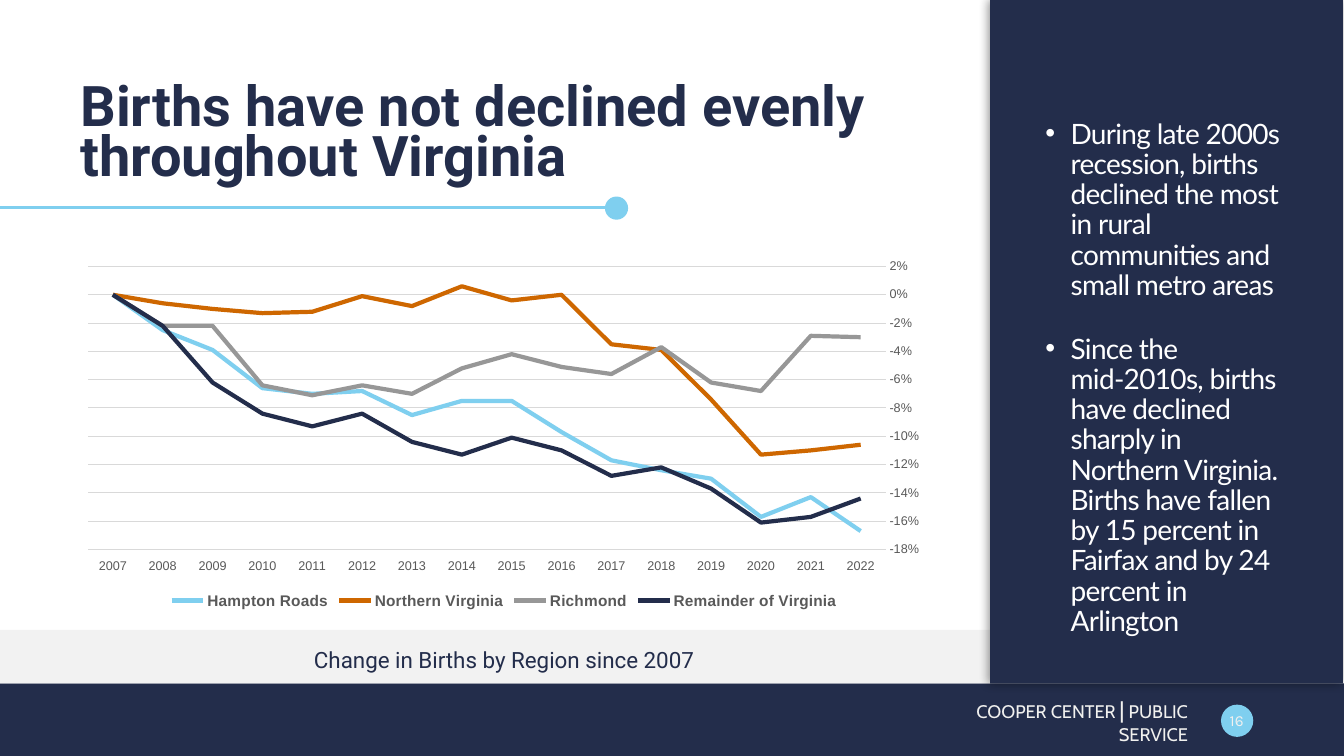
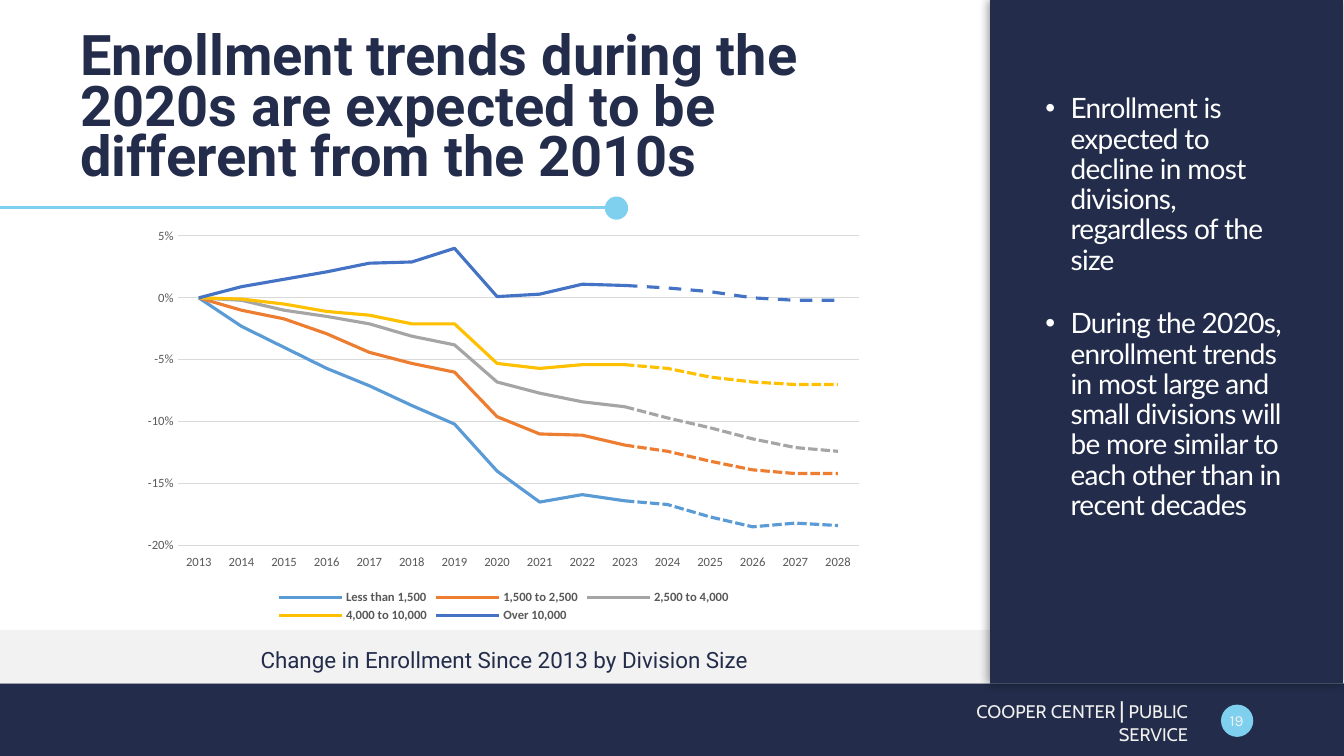
"""Builds two slides on births and enrollment, each with a line chart and a side panel."""
from dataclasses import dataclass
from typing import Any, NamedTuple

from lxml.etree import SubElement
from pptx import Presentation
from pptx.chart.data import CategoryChartData
from pptx.dml.color import RGBColor
from pptx.enum.chart import XL_CHART_TYPE, XL_LEGEND_POSITION, XL_TICK_LABEL_POSITION, XL_TICK_MARK
from pptx.enum.dml import MSO_LINE
from pptx.enum.shapes import MSO_CONNECTOR, MSO_SHAPE
from pptx.enum.text import MSO_ANCHOR, PP_ALIGN
from pptx.oxml.ns import qn
from pptx.util import Inches, Pt

NAVY, SKY, PALE, WHITE, OFF_WHITE = "232D4B", "7FCFEF", "F2F2F2", "FFFFFF", "F1F1EF"
GRID, LABEL = "D9D9D9", "595959"


class Box(NamedTuple):
    left: float
    top: float
    width: float
    height: float


class Style(NamedTuple):
    font: str
    size: float
    color: str
    bold: bool = False


class Band(NamedTuple):
    shape: MSO_SHAPE
    box: Box
    color: str
    shadow: bool = False


class Line(NamedTuple):
    name: str
    color: str
    values: list[float | None]
    dash: MSO_LINE | None = None


@dataclass
class LineChart:
    box: Box
    years: list[int]
    lines: list[Line]
    font: str
    legend_size: float
    width: float
    scale: dict[str, float]
    plot: Box
    legend: Box
    reverse: bool = False
    hidden: range = range(0)


@dataclass
class Page:
    number: int
    title: str
    points: list[str]
    points_box: Box
    caption: str
    chart: LineChart


TITLE = Style("Roboto", 40, NAVY, True)
CAPTION = Style("Roboto", 16, NAVY)
POINT = Style("Lato", 20, WHITE)
FOOTER = Style("Cabin", 13, OFF_WHITE)
NUMBER = Style("Karla", 11, OFF_WHITE)

BANDS = [
    Band(MSO_SHAPE.RECTANGLE, Box(0, 6.78, 13.33, 0.72), NAVY),
    Band(MSO_SHAPE.OVAL, Box(12.11, 6.99, 0.32, 0.32), SKY),
    Band(MSO_SHAPE.RECTANGLE, Box(0, 6.25, 9.82, 0.53), PALE),
    Band(MSO_SHAPE.RECTANGLE, Box(9.82, 0, 3.5, 6.78), NAVY, True),
    Band(MSO_SHAPE.OVAL, Box(6, 1.95, 0.23, 0.23), SKY),
]

REGIONS = [
    Line("Hampton Roads", SKY, [-0.167, -0.143, -0.157, -0.13, -0.124, -0.117, -0.097, -0.075,
                                -0.075, -0.085, -0.068, -0.07, -0.066, -0.039, -0.025, 0]),
    Line("Northern Virginia", "CE6700", [-0.106, -0.11, -0.113, -0.074, -0.039, -0.035, 0, -0.004,
                                         0.006, -0.008, -0.001, -0.012, -0.013, -0.01, -0.006, 0]),
    Line("Richmond", "979797", [-0.03, -0.029, -0.068, -0.062, -0.037, -0.056, -0.051, -0.042,
                                -0.052, -0.07, -0.064, -0.071, -0.064, -0.022, -0.022, 0]),
    Line("Remainder of Virginia", NAVY, [-0.144, -0.157, -0.161, -0.137, -0.122, -0.128, -0.11, -0.101,
                                         -0.113, -0.104, -0.084, -0.093, -0.084, -0.062, -0.022, 0]),
]

DIVISIONS = [
    Line("Less than 1,500", "5B9BD5", [0, -0.023, -0.04, -0.057, -0.071, -0.087, -0.102, -0.14,
                                       -0.165, -0.159, -0.164, -0.167, -0.177, -0.185, -0.182, -0.184]),
    Line("1,500 to 2,500", "ED7D31", [0, -0.01, -0.017, -0.029, -0.044, -0.053, -0.06, -0.096,
                                      -0.11, -0.111, -0.119, -0.124, -0.132, -0.139, -0.142, -0.142]),
    Line("2,500 to 4,000", "A5A5A5", [0, -0.002, -0.01, -0.015, -0.021, -0.031, -0.038, -0.068,
                                      -0.077, -0.084, -0.088, -0.097, -0.105, -0.114, -0.121, -0.124]),
    Line("4,000 to 10,000", "FFC000", [0, -0.001, -0.005, -0.011, -0.014, -0.021, -0.021, -0.053,
                                       -0.057, -0.054, -0.054, -0.057, -0.064, -0.068, -0.07, -0.07]),
    Line("Over 10,000", "4472C4", [0, 0.009, 0.015, 0.021, 0.028, 0.029, 0.04, 0.001,
                                   0.003, 0.011, 0.01, 0.008, 0.005, 0, -0.002, -0.002]),
]


def split_projection(lines: list[Line], last: int) -> list[Line]:
    """Divide each line into a solid past and a dashed projection that meet at index last."""
    past = [line._replace(values=line.values[:last + 1] + [None] * (len(line.values) - last - 1))
            for line in lines]
    future = [Line(f"Series {number}", line.color, [None] * last + line.values[last:],
                   MSO_LINE.DASH if line is lines[-1] else MSO_LINE.SQUARE_DOT)
              for number, line in enumerate(lines, len(lines) + 1)]
    return past + future


PAGES = [
    Page(
        16, "Births have not declined evenly throughout Virginia",
        ["During late 2000s recession, births declined the most in rural communities and small metro areas",
         "Since the mid-2010s, births have declined sharply in Northern Virginia. "
         "Births have fallen by 15 percent in Fairfax and by 24 percent in Arlington"],
        Box(10.27, 1.14, 2.61, 5.11), "Change in Births by Region since 2007",
        LineChart(Box(0.7, 2.5, 8.6, 3.6), list(range(2022, 2006, -1)), REGIONS, "Arial", 11, 3,
                  {"minimum_scale": -0.18, "maximum_scale": 0.02, "major_unit": 0.02},
                  Box(0.02, 0.04, 0.92, 0.78), Box(0.11, 0.93, 0.78, 0.07), reverse=True),
    ),
    Page(
        19, "Enrollment trends during the 2020s are expected to be different from the 2010s",
        ["Enrollment is expected to decline in most divisions, regardless of the size",
         "During the 2020s, enrollment trends in most large and small divisions will be "
         "more similar to each other than in recent decades"],
        Box(10.27, 0.89, 2.6, 5.36), "Change in Enrollment Since 2013 by Division Size",
        LineChart(Box(1.32, 2.18, 7.35, 4.04), list(range(2013, 2029)), split_projection(DIVISIONS, 10),
                  "Calibri", 9, 2.25,
                  {"minimum_scale": -0.2, "maximum_scale": 0.05, "major_unit": 0.05},
                  Box(0.06, 0.04, 0.92, 0.76), Box(0.19, 0.9, 0.62, 0.1), hidden=range(5, 10)),
    ),
]


def set_format(target: Any, **values: Any) -> None:
    """Set each named attribute on the target."""
    for name, value in values.items():
        setattr(target, name, value)


def paint(color_format: Any, color: str) -> None:
    """Give a fore colour, line colour or font colour its hex value."""
    color_format.rgb = RGBColor.from_string(color)


def style_font(font: Any, style: Style) -> None:
    """Apply a text style to a font."""
    set_format(font, name=style.font, size=Pt(style.size), bold=style.bold)
    paint(font.color, style.color)


def add_band(slide: Any, band: Band) -> None:
    """Draw one filled shape, with a soft shadow to its left if asked for."""
    shape = slide.shapes.add_shape(band.shape, *map(Inches, band.box))
    shape.shadow.inherit = False
    shape.fill.solid()
    paint(shape.fill.fore_color, band.color)
    shape.line.fill.background()
    if band.shadow:
        effects = shape._element.spPr.find(qn("a:effectLst"))
        shadow = SubElement(effects, qn("a:outerShdw"), blurRad=str(Pt(7)), dist=str(Pt(1)),
                            dir="10800000", algn="r", rotWithShape="0")
        black = SubElement(shadow, qn("a:srgbClr"), val="000000")
        SubElement(black, qn("a:alpha"), val="40000")


def add_rule(slide: Any) -> None:
    """Draw the line under the title."""
    rule = slide.shapes.add_connector(MSO_CONNECTOR.STRAIGHT, 0, Inches(2.06), Inches(6), Inches(2.06))
    rule.line.width = Pt(2.25)
    paint(rule.line.color, SKY)
    SubElement(rule._element.spPr, qn("a:effectLst"))


def add_text(slide: Any, box: Box, runs: list[tuple[str, Style]], anchor: MSO_ANCHOR = MSO_ANCHOR.TOP,
             **paragraph_format: Any) -> None:
    """Add a wrapped text box of one paragraph."""
    frame = slide.shapes.add_textbox(*map(Inches, box)).text_frame
    set_format(frame, word_wrap=True, vertical_anchor=anchor)
    paragraph = frame.paragraphs[0]
    set_format(paragraph, **paragraph_format)
    for text, style in runs:
        run = paragraph.add_run()
        run.text = text
        style_font(run.font, style)


def add_points(slide: Any, box: Box, points: list[str]) -> None:
    """Add the bulleted text of the side panel."""
    frame = slide.shapes.add_textbox(*map(Inches, box)).text_frame
    frame.word_wrap = True
    for index, point in enumerate(points):
        paragraph = frame.add_paragraph() if index else frame.paragraphs[0]
        properties = paragraph._p.get_or_add_pPr()
        properties.set("marL", str(Inches(0.25)))
        properties.set("indent", str(Inches(-0.25)))
        SubElement(properties, qn("a:buFont"), typeface="Arial")
        SubElement(properties, qn("a:buChar"), char="•")
        set_format(paragraph, line_spacing=0.9, space_after=Pt(24))
        run = paragraph.add_run()
        run.text = point
        style_font(run.font, POINT)
        run._r.get_or_add_rPr().set("spc", "-50")


def place(parent: Any, following: Any, area: Box, inner: bool = False) -> None:
    """Put a manual layout, in fractions of the chart, before a child of the parent."""
    for old in parent.findall(qn("c:layout")):
        parent.remove(old)
    layout = SubElement(parent, qn("c:layout"))
    manual = SubElement(layout, qn("c:manualLayout"))
    values = {"layoutTarget": "inner"} if inner else {}
    values |= {"xMode": "edge", "yMode": "edge"}
    values |= {name: str(value) for name, value in zip("xywh", area)}
    for name, value in values.items():
        SubElement(manual, qn(f"c:{name}"), val=value)
    following.addprevious(layout)


def add_legend(chart: Any, spec_chart: LineChart) -> None:
    """Show the legend below the plot without its hidden entries."""
    chart.has_legend = True
    legend = chart.legend
    set_format(legend, position=XL_LEGEND_POSITION.BOTTOM, include_in_layout=False)
    style_font(legend.font, Style(spec_chart.font, spec_chart.legend_size, LABEL, True))
    element = legend._element
    place(element, element.find(qn("c:overlay")), spec_chart.legend)
    for index in spec_chart.hidden:
        entry = SubElement(element, qn("c:legendEntry"))
        SubElement(entry, qn("c:idx"), val=str(index))
        SubElement(entry, qn("c:delete"), val="1")
        element.find(qn("c:layout")).addprevious(entry)


def add_line_chart(slide: Any, line_chart: LineChart) -> None:
    """Add a line chart with percent gridlines and year labels."""
    data = CategoryChartData(number_format="0.0%")
    data.categories = [str(year) for year in line_chart.years]
    for line in line_chart.lines:
        data.add_series(line.name, line.values)
    chart = slide.shapes.add_chart(XL_CHART_TYPE.LINE, *map(Inches, line_chart.box), data).chart
    chart.has_title = False
    label_style = Style(line_chart.font, 9, LABEL)
    style_font(chart.font, label_style)
    chart.plots[0].vary_by_categories = False
    for series, line in zip(chart.plots[0].series, line_chart.lines):
        series.smooth = False
        paint(series.format.line.color, line.color)
        set_format(series.format.line, width=Pt(line_chart.width), dash_style=line.dash)
    years, percents = chart.category_axis, chart.value_axis
    for axis in (years, percents):
        set_format(axis, major_tick_mark=XL_TICK_MARK.NONE, minor_tick_mark=XL_TICK_MARK.NONE)
        style_font(axis.tick_labels.font, label_style)
    set_format(years, tick_label_position=XL_TICK_LABEL_POSITION.LOW, reverse_order=line_chart.reverse)
    set_format(percents, has_major_gridlines=True, **line_chart.scale)
    set_format(percents.tick_labels, number_format="0%", number_format_is_linked=False)
    percents.format.line.fill.background()
    for line_format in (years.format.line, percents.major_gridlines.format.line):
        paint(line_format.color, GRID)
        line_format.width = Pt(0.75)
    plot_area = chart.plots[0]._element.getparent()
    place(plot_area, chart.plots[0]._element, line_chart.plot, inner=True)
    add_legend(chart, line_chart)


def add_page(presentation: Any, page: Page) -> None:
    """Add one slide with the shared bands, title, panel, footer and chart."""
    slide = presentation.slides.add_slide(presentation.slide_layouts[6])
    for band in BANDS:
        add_band(slide, band)
    add_rule(slide)
    add_text(slide, Box(0.7, 0.6, 8.6, 1.3), [(page.title, TITLE)], MSO_ANCHOR.BOTTOM, line_spacing=0.75)
    add_points(slide, page.points_box, page.points)
    footer = [("COOPER CENTER ", FOOTER), ("|", FOOTER._replace(size=16)), (" PUBLIC SERVICE", FOOTER)]
    add_text(slide, Box(9.2, 6.95, 2.68, 0.4), footer, MSO_ANCHOR.MIDDLE, alignment=PP_ALIGN.RIGHT)
    add_text(slide, Box(12.04, 6.97, 0.45, 0.35), [(str(page.number), NUMBER)], MSO_ANCHOR.MIDDLE,
             alignment=PP_ALIGN.CENTER)
    add_text(slide, Box(0.7, 6.39, 8.6, 0.26), [(page.caption, CAPTION)],
             alignment=PP_ALIGN.CENTER, line_spacing=0.9)
    add_line_chart(slide, page.chart)


def main() -> None:
    """Build and save the presentation."""
    presentation = Presentation()
    set_format(presentation, slide_width=Inches(13.33), slide_height=Inches(7.5))
    for page in PAGES:
        add_page(presentation, page)
    presentation.save("out.pptx")


if __name__ == "__main__":
    main()
